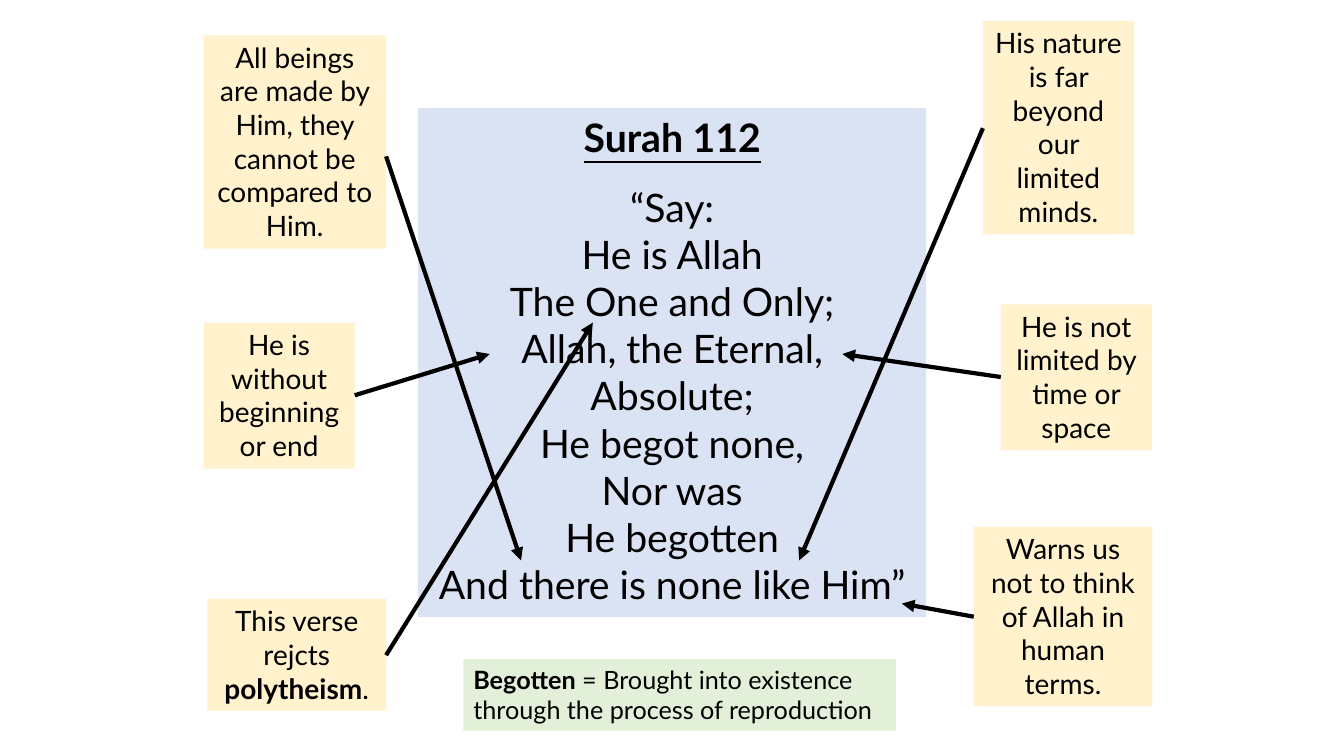
"""Build a slide that explains Surah 112 with annotated verses."""
from pptx import Presentation
from pptx.dml.color import RGBColor
from pptx.enum.shapes import MSO_CONNECTOR as Connector
from pptx.enum.text import MSO_AUTO_SIZE as AutoSize, PP_ALIGN as Align
from pptx.oxml.ns import qn
from pptx.util import Cm, Pt
from lxml.etree import SubElement

BLACK = RGBColor(0x00, 0x00, 0x00)
BLUE = RGBColor(0xDA, 0xE3, 0xF3)
YELLOW = RGBColor(0xFF, 0xF2, 0xCC)
GREEN = RGBColor(0xE2, 0xF0, 0xD9)

presentation = Presentation()
presentation.slide_width = Cm(33.87)
presentation.slide_height = Cm(19.05)
slide = presentation.slides.add_slide(presentation.slide_layouts[6])


def add_box(bounds, fill, size, lines, align=Align.CENTER):
    """Add a filled text box; each line is a list of runs, odd ones bold."""
    box = slide.shapes.add_textbox(*[Cm(length) for length in bounds])
    box.fill.solid()
    box.fill.fore_color.rgb = fill
    frame = box.text_frame
    frame.word_wrap = True
    frame.auto_size = AutoSize.SHAPE_TO_FIT_TEXT
    for number, parts in enumerate(lines):
        paragraph = frame.add_paragraph() if number else frame.paragraphs[0]
        paragraph.alignment = align
        for position, part in enumerate(parts):
            if part:
                run = paragraph.add_run()
                run.text = part
                run.font.name = "Lato"
                run.font.size = Pt(size)
                run.font.bold = position % 2 == 1
                run.font.color.rgb = BLACK
    return frame


def add_arrow(start, end):
    """Add a black arrow that points at end."""
    arrow = slide.shapes.add_connector(
        Connector.STRAIGHT, *[Cm(length) for length in start + end])
    arrow.line.color.rgb = BLACK
    arrow.line.width = Pt(3)
    SubElement(arrow.line._get_or_add_ln(), qn("a:tailEnd"), type="triangle")
    SubElement(arrow._element.spPr, qn("a:effectLst"))


verses = [
    "“Say:",
    "He is Allah",
    "The One and Only;",
    "Allah, the Eternal,",
    "Absolute;",
    "He begot none,",
    "Nor was",
    "He begotten",
    "And there is none like Him”",
]
surah = add_box((10.54, 2.72, 12.8, 12.83), BLUE, 28,
                [["", "Surah 112"]] + [[verse] for verse in verses])
surah.paragraphs[0].runs[0].font.underline = True
surah.paragraphs[1].space_before = Pt(16.8)

notes = [
    (["He is not limited by time or space"],
     (25.22, 7.67, 3.81, 3.68), (25.22, 9.5), (21.23, 8.92)),
    (["Warns us not to think of Allah in human terms."],
     (24.54, 13.28, 4.5, 4.52), (24.54, 15.54), (22.73, 15.21)),
    (["He is without beginning or end"],
     (5.13, 8.13, 3.81, 3.68), (8.94, 9.96), (12.34, 8.92)),
    (["All beings are made by Him, they cannot be compared to Him."],
     (5.13, 0.89, 4.6, 5.38), (9.73, 3.94), (13.13, 14.12)),
    (["His nature is far beyond our limited minds."],
     (24.77, 0.53, 3.81, 5.38), (24.77, 3.23), (20.14, 14.12)),
    (["This verse rejcts ", "polytheism", "."],
     (5.23, 15.09, 4.5, 2.82), (9.73, 16.51), (14.94, 8.13)),
]
for parts, bounds, start, end in notes:
    add_box(bounds, YELLOW, 20, [parts])
    add_arrow(start, end)

definition = ["", "Begotten",
              " = Brought into existence through the process of reproduction"]
add_box((11.68, 16.61, 10.9, 1.8), GREEN, 18, [definition], Align.LEFT)

presentation.save("out.pptx")
